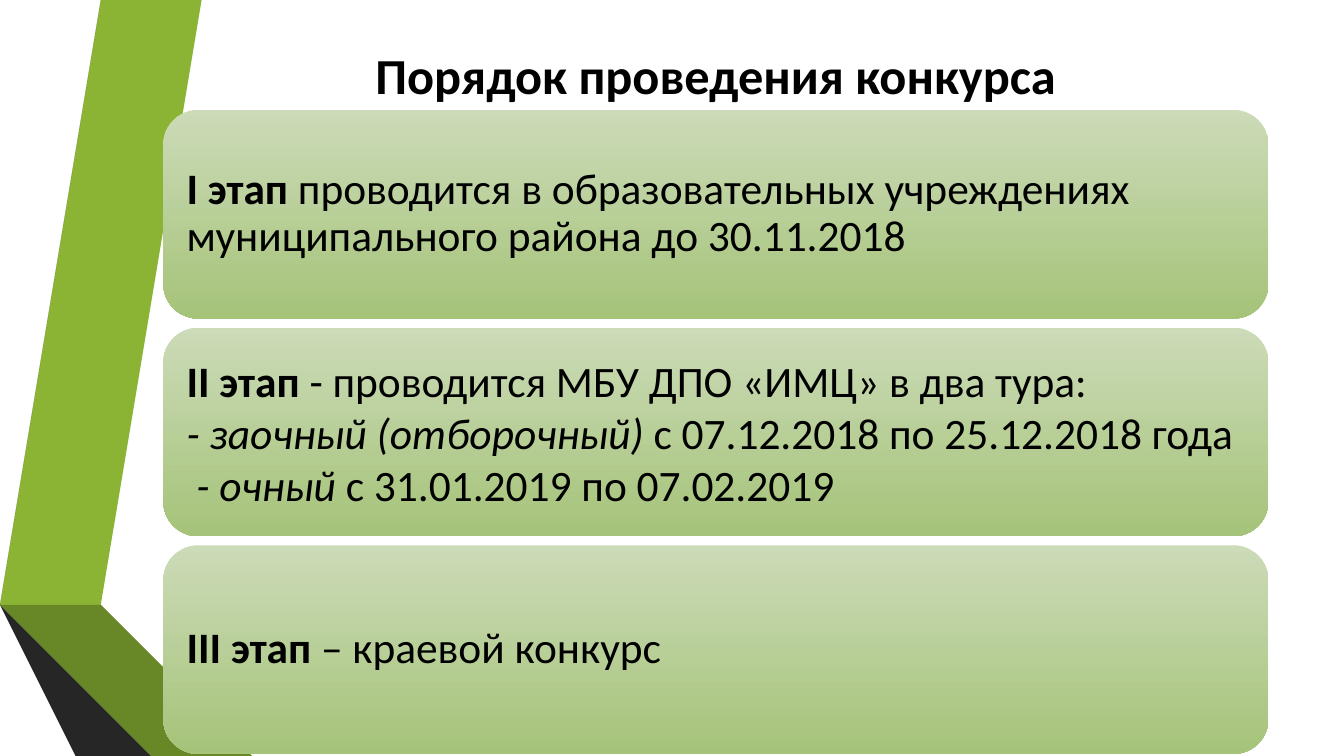
"""Build the slide on the stages of the contest."""
from dataclasses import dataclass

from pptx import Presentation
from pptx import util as u
from pptx.dml.color import RGBColor
from pptx.enum import shapes, text
from pptx.slide import Slide
from pptx.text.text import TextFrame

BLACK = RGBColor(0x00, 0x00, 0x00)
CARD_TOP_COLOR = RGBColor(0xCC, 0xDB, 0xB8)
CARD_BOTTOM_COLOR = RGBColor(0xA5, 0xC3, 0x79)
GREEN = RGBColor(0x8B, 0xB4, 0x34)
GREEN_SHADE = RGBColor(0x68, 0x87, 0x27)
GREEN_EDGE = RGBColor(0x46, 0x5A, 0x1A)
GRAY = RGBColor(0x59, 0x59, 0x59)
GRAY_SHADE = RGBColor(0x40, 0x40, 0x40)
GRAY_EDGE = RGBColor(0x26, 0x26, 0x26)

FONT = "Calibri"
LEFT, WIDTH = 1.62, 10.96
CARD_TOP, CARD_HEIGHT, CARD_STEP = 1.09, 2.07, 2.16


@dataclass(frozen=True)
class Ribbon:
    """A filled polygon of the side ornament, in inches."""

    color: RGBColor
    points: tuple[tuple[float, float], ...]


@dataclass(frozen=True)
class Span:
    """A piece of text with its style."""

    words: str
    bold: bool = False
    italic: bool = False


@dataclass(frozen=True)
class Stage:
    """A card with its paragraphs."""

    paragraphs: tuple[tuple[Span, ...], ...]
    line_spacing: float = 0.9


RIBBONS = (
    Ribbon(GREEN, ((0.5, 5.78), (0.77, 5.83), (1.73, 0), (1.45, 0))),
    Ribbon(GRAY, ((1.39, 0), (1.11, 0), (0.16, 5.73), (0.44, 5.77))),
    Ribbon(GRAY_EDGE, ((0.16, 5.73), (1.45, 7.5), (1.51, 7.5))),
    Ribbon(GREEN_EDGE, ((0.5, 5.79), (2.08, 7.5), (2.14, 7.5))),
    Ribbon(GREEN_SHADE, ((0.5, 5.78), (2.14, 7.5), (2.83, 7.5), (0.77, 5.83))),
    Ribbon(GRAY_SHADE, ((2.02, 7.5), (0.48, 5.83), (0.44, 5.77), (0.16, 5.73), (1.51, 7.5))),
)

TITLE = ((Span("Порядок проведения конкурса", bold=True),),)

STAGES = (
    Stage((
        (
            Span("I этап", bold=True),
            Span(" проводится в образовательных учреждениях муниципального района до 30.11.2018"),
        ),
    )),
    Stage((
        (Span("II этап ", bold=True), Span("- проводится МБУ ДПО «ИМЦ» в два тура:")),
        (Span("- заочный (отборочный) ", italic=True), Span("с 07.12.2018 по 25.12.2018 года")),
        (Span(" - очный", italic=True), Span(" с 31.01.2019 по 07.02.2019")),
    ), line_spacing=1.0),
    Stage(((Span("III этап ", bold=True), Span("– краевой конкурс")),)),
)


def write_text(
    frame: TextFrame,
    paragraphs: tuple[tuple[Span, ...], ...],
    *,
    size: float,
    align: text.PP_ALIGN = text.PP_ALIGN.LEFT,
    line_spacing: float = 1.0,
    inset: float = 0.13,
) -> None:
    """Fill a text frame with styled paragraphs."""
    frame.word_wrap = True
    frame.vertical_anchor = text.MSO_ANCHOR.MIDDLE
    frame.margin_left = frame.margin_right = u.Inches(inset)
    frame.margin_top = frame.margin_bottom = u.Inches(inset)
    for index, spans in enumerate(paragraphs):
        para = frame.add_paragraph() if index else frame.paragraphs[0]
        para.alignment = align
        para.line_spacing = line_spacing
        for span in spans:
            run = para.add_run()
            run.text = span.words
            run.font.name = FONT
            run.font.size = u.Pt(size)
            run.font.bold = span.bold
            run.font.italic = span.italic
            run.font.color.rgb = BLACK


def draw_ribbon(page: Slide, ribbon: Ribbon) -> None:
    """Draw one polygon of the side ornament."""
    start, *rest = ribbon.points
    builder = page.shapes.build_freeform(*start, scale=u.Inches(1))
    builder.add_line_segments(rest, close=True)
    shape = builder.convert_to_shape()
    shape.shadow.inherit = False
    shape.fill.solid()
    shape.fill.fore_color.rgb = ribbon.color
    shape.line.fill.background()


def draw_title(page: Slide) -> None:
    """Draw the centred heading."""
    box = page.shapes.add_textbox(
        u.Inches(LEFT), u.Inches(0.42), u.Inches(WIDTH), u.Inches(0.64)
    )
    write_text(box.text_frame, TITLE, size=36, align=text.PP_ALIGN.CENTER, inset=0.05)


def draw_stage(page: Slide, stage: Stage, top: float) -> None:
    """Draw one rounded card with a vertical gradient."""
    card = page.shapes.add_shape(
        shapes.MSO_SHAPE.ROUNDED_RECTANGLE,
        u.Inches(LEFT), u.Inches(top), u.Inches(WIDTH), u.Inches(CARD_HEIGHT),
    )
    card.shadow.inherit = False
    card.line.fill.background()
    card.fill.gradient()
    card.fill.gradient_angle = 270
    for stop, color in zip(card.fill.gradient_stops, (CARD_TOP_COLOR, CARD_BOTTOM_COLOR)):
        stop.color.rgb = color
    write_text(card.text_frame, stage.paragraphs, size=31, line_spacing=stage.line_spacing)


def main() -> None:
    """Assemble and save the deck."""
    deck = Presentation()
    deck.slide_width, deck.slide_height = u.Inches(13.33), u.Inches(7.5)
    page = deck.slides.add_slide(deck.slide_layouts[6])
    for ribbon in RIBBONS:
        draw_ribbon(page, ribbon)
    draw_title(page)
    for index, stage in enumerate(STAGES):
        draw_stage(page, stage, CARD_TOP + index * CARD_STEP)
    deck.save("out.pptx")


if __name__ == "__main__":
    main()
